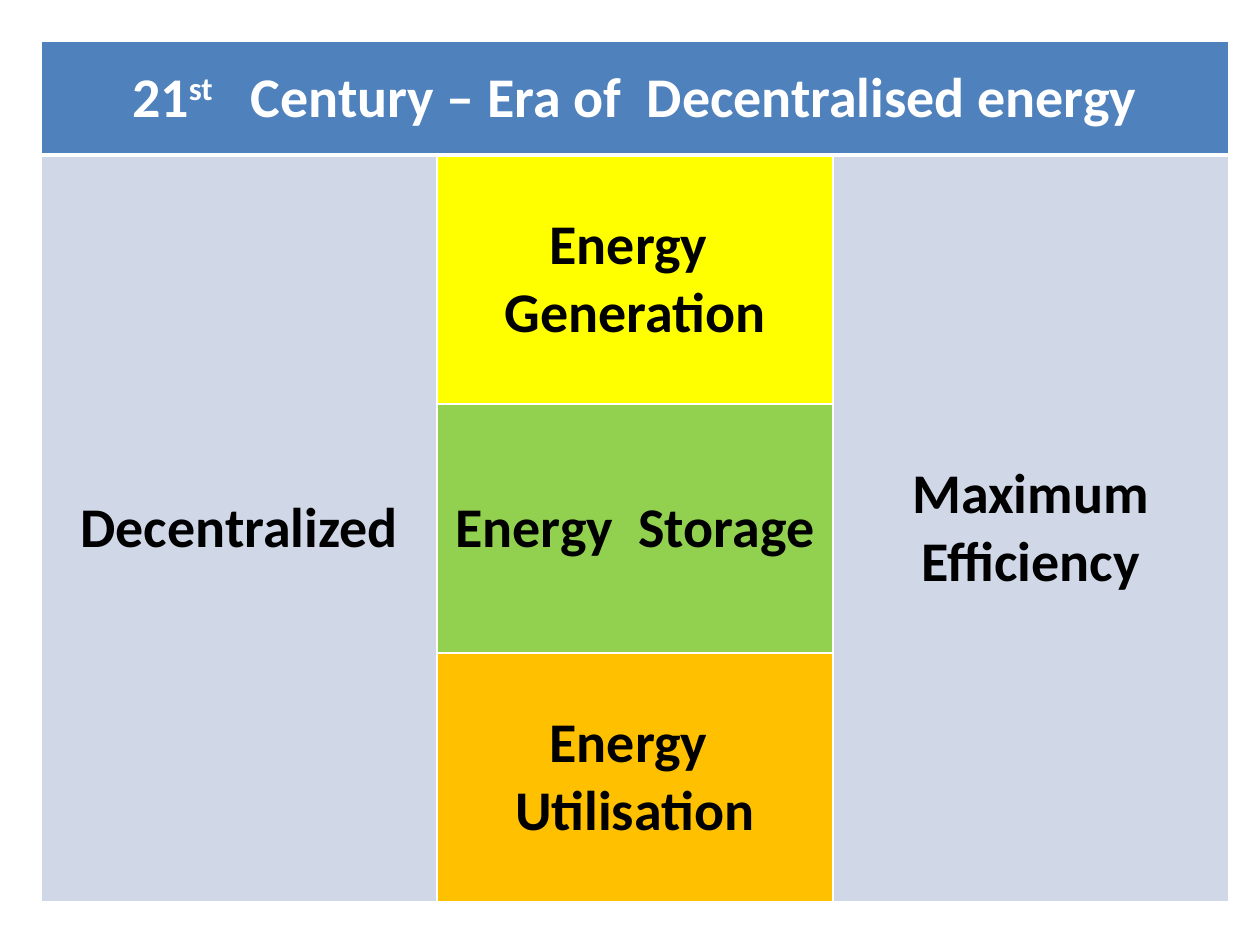
from dataclasses import dataclass

from lxml import etree
from pptx import Presentation
from pptx.dml.color import RGBColor
from pptx.enum import text
from pptx.oxml import ns
from pptx.util import Inches, Pt


@dataclass(frozen=True)
class Theme:
    font: str = "Calibri"
    size: int = 32
    white: str = "FFFFFF"
    black: str = "000000"
    header: str = "4F81BD"
    side: str = "D0D8E8"
    generation: str = "FFFF00"
    storage: str = "92D050"
    utilisation: str = "FFC000"
    thin: int = 1
    thick: int = 3


THEME = Theme()


def add_run(p, words, color=THEME.black, baseline=None):
    r = p.add_run()
    r.text = words
    r.font.name = THEME.font
    r.font.size = Pt(THEME.size)
    r.font.bold = True
    r.font.color.rgb = RGBColor.from_string(color)
    if baseline:
        r.font._element.set("baseline", str(baseline * 1000))


def set_borders(cell, bottom=THEME.thin, top=THEME.thin):
    tc_pr = cell._tc.get_or_add_tcPr()
    widths = {"lnL": THEME.thin, "lnR": THEME.thin, "lnT": top, "lnB": bottom}
    # Border lines must come before the fill
    for i, (side, width) in enumerate(widths.items()):
        ln = etree.Element(ns.qn(f"a:{side}"), w=str(Pt(width)))
        fill = etree.SubElement(ln, ns.qn("a:solidFill"))
        etree.SubElement(fill, ns.qn("a:srgbClr"), val=THEME.white)
        tc_pr.insert(i, ln)


def fill_cell(cell, color, *runs):
    """Fill a cell and write runs given as (words, format) pairs."""
    cell.fill.solid()
    cell.fill.fore_color.rgb = RGBColor.from_string(color)
    cell.vertical_anchor = text.MSO_ANCHOR.MIDDLE
    p = cell.text_frame.paragraphs[0]
    p.alignment = text.PP_ALIGN.CENTER
    for words, style in runs:
        add_run(p, words, **style)


def add_energy_table(s, left, top, width, height):
    table = s.shapes.add_table(4, 3, left, top, width, height).table
    header_height = Inches(0.9)
    for col in table.columns:
        col.width = int(width / 3)
    table.rows[0].height = header_height
    for row in list(table.rows)[1:]:
        row.height = int((height - header_height) / 3)

    # Borders: a thick rule below the header, thin lines elsewhere
    for i in range(4):
        for j in range(3):
            set_borders(table.cell(i, j),
                        bottom=THEME.thick if i == 0 else THEME.thin,
                        top=THEME.thick if i == 1 else THEME.thin)

    # Header across all columns
    table.cell(0, 0).merge(table.cell(0, 2))
    white = {"color": THEME.white}
    fill_cell(table.cell(0, 0), THEME.header,
              ("21", white),
              ("st", {**white, "baseline": 30}),
              ("   Century – Era of  Decentralised energy", white))

    # Side columns
    for j, words in ((0, "Decentralized"), (2, "Maximum Efficiency")):
        table.cell(1, j).merge(table.cell(3, j))
        fill_cell(table.cell(1, j), THEME.side, (words, {}))

    # Middle column of energy stages
    stages = (("Energy  Generation", THEME.generation),
              ("Energy  Storage", THEME.storage),
              ("Energy  Utilisation", THEME.utilisation))
    for i, (words, color) in enumerate(stages, start=1):
        fill_cell(table.cell(i, 1), color, (words, {}))


def main():
    prs = Presentation()
    prs.slide_width, prs.slide_height = Inches(10), Inches(7.5)
    s = prs.slides.add_slide(prs.slide_layouts[6])
    add_energy_table(s, Inches(0.33), Inches(0.33), Inches(9.42), Inches(6.83))
    prs.save("out.pptx")


if __name__ == "__main__":
    main()
